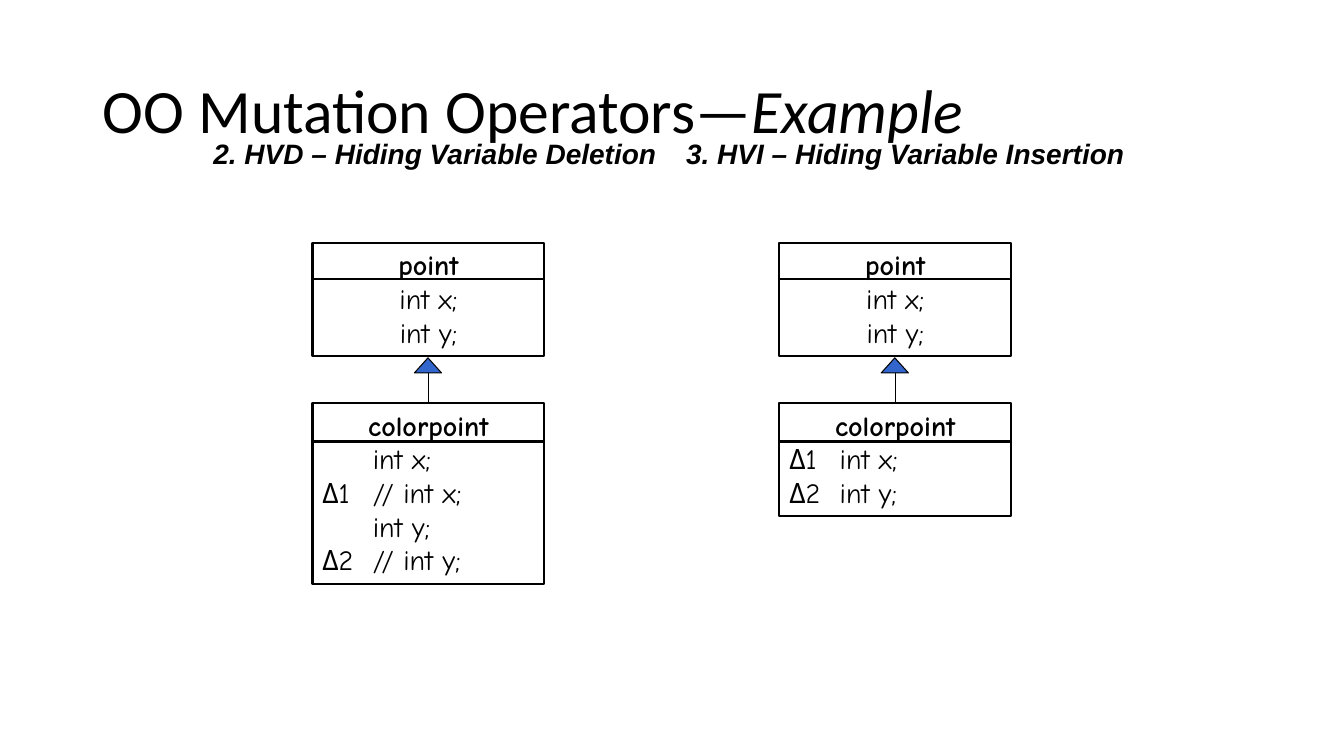
from lxml.etree import SubElement
from pptx import Presentation
from pptx.dml.color import RGBColor as Rgb
from pptx.enum.shapes import MSO_CONNECTOR as Link, MSO_SHAPE as Kind
from pptx.enum.text import MSO_ANCHOR as Anchor, MSO_AUTO_SIZE as Fit, PP_ALIGN as Align
from pptx.oxml.ns import qn
from pptx.util import Inches, Pt

COLORS = {"ink": "000000", "arrow": "3366CC"}
WIDE = 2.3
TAB = 0.5


class Deck:
    def __init__(self):
        self.prs = Presentation()
        self.prs.slide_width = Inches(13.33)
        self.prs.slide_height = Inches(7.5)
        self.slide = self.prs.slides.add_slide(self.prs.slide_layouts[5])
        self.shapes = self.slide.shapes

    def color(self, name):
        return Rgb.from_string(COLORS[name])

    def style(self, run, face, size, bold=False, italic=False):
        font = run.font
        font.name, font.size = face, Pt(size)
        font.bold, font.italic = bold, italic
        font.color.rgb = self.color("ink")

    def title(self, plain, slanted):
        box = self.shapes.title
        box.left, box.top = Inches(0.92), Inches(0.4)
        box.width, box.height = Inches(11.5), Inches(1.45)
        frame = box.text_frame
        frame.auto_size = Fit.NONE
        frame.vertical_anchor = Anchor.MIDDLE
        frame.text = plain
        para = frame.paragraphs[0]
        para.alignment = Align.LEFT
        para.line_spacing = 0.9
        para.add_run().text = slanted
        for run in para.runs:
            self.style(run, "Calibri", 44, italic=run.text == slanted)

    def label(self, text, left, width):
        box = self.shapes.add_textbox(Inches(left), Inches(1.31), Inches(width), Inches(0.44))
        frame = box.text_frame
        frame.word_wrap = False
        frame.text = text
        para = frame.paragraphs[0]
        para.alignment = Align.CENTER
        self.style(para.runs[0], "Arial", 20, bold=True, italic=True)

    def shape(self, kind, left, top, width, height, weight, fill=None):
        form = self.shapes.add_shape(
            kind, Inches(left), Inches(top), Inches(width), Inches(height))
        form.shadow.inherit = False
        if fill:
            form.fill.solid()
            form.fill.fore_color.rgb = self.color(fill)
        else:
            form.fill.background()
        form.line.color.rgb = self.color("ink")
        form.line.width = Pt(weight)
        return form

    def line(self, x1, y1, x2, y2, weight):
        link = self.shapes.add_connector(
            Link.STRAIGHT, Inches(x1), Inches(y1), Inches(x2), Inches(y2))
        link.line.color.rgb = self.color("ink")
        link.line.width = Pt(weight)
        SubElement(link._element.spPr, qn("a:effectLst"))

    def entity(self, left, top, height, rule, name, fields, align):
        """Draw a class box: a bold name, a rule below it, then its fields."""
        box = self.shape(Kind.RECTANGLE, left, top, WIDE, height, 1.5)
        frame = box.text_frame
        frame.word_wrap = True
        frame.vertical_anchor = Anchor.TOP
        frame.text = "\n".join([name, *fields])
        for row, para in enumerate(frame.paragraphs):
            para.alignment = align if row else Align.CENTER
            if "\t" in para.text:
                tabs = SubElement(para._p.get_or_add_pPr(), qn("a:tabLst"))
                SubElement(tabs, qn("a:tab"), pos=str(Inches(TAB)), algn="l")
            for run in para.runs:
                self.style(run, "Comic Neue", 20, bold=row == 0)
        self.line(left, rule, left + WIDE, rule, 1.5)

    def inherit(self, mid):
        """Draw the arrow that points from the subclass up to its parent."""
        self.line(mid, 3.69, mid, 3.99, 0.75)
        self.shape(Kind.ISOSCELES_TRIANGLE, mid - 0.14, 3.55, 0.27, 0.15, 0.75, "arrow")


def main():
    deck = Deck()
    deck.title("OO Mutation Operators—", "Example")
    cases = [
        ("2. HVD – Hiding Variable Deletion", 2, 4.63, 3.1, 1.79,
         ["\tint x;", "Δ1 \t// int x;", "\tint y;", "Δ2 \t// int y;"]),
        ("3. HVI – Hiding Variable Insertion", 6.65, 4.66, 7.73, 1.12,
         ["Δ1 \tint x;", "Δ2 \tint y;"]),
    ]
    for text, start, width, left, height, fields in cases:
        deck.label(text, start, width)
        deck.entity(left, 2.41, 1.12, 2.77, "point", ["int x;", "int y;"], Align.CENTER)
        deck.entity(left, 4, height, 4.38, "colorpoint", fields, Align.LEFT)
        deck.inherit(left + WIDE / 2)
    deck.prs.save("out.pptx")


if __name__ == "__main__":
    main()
